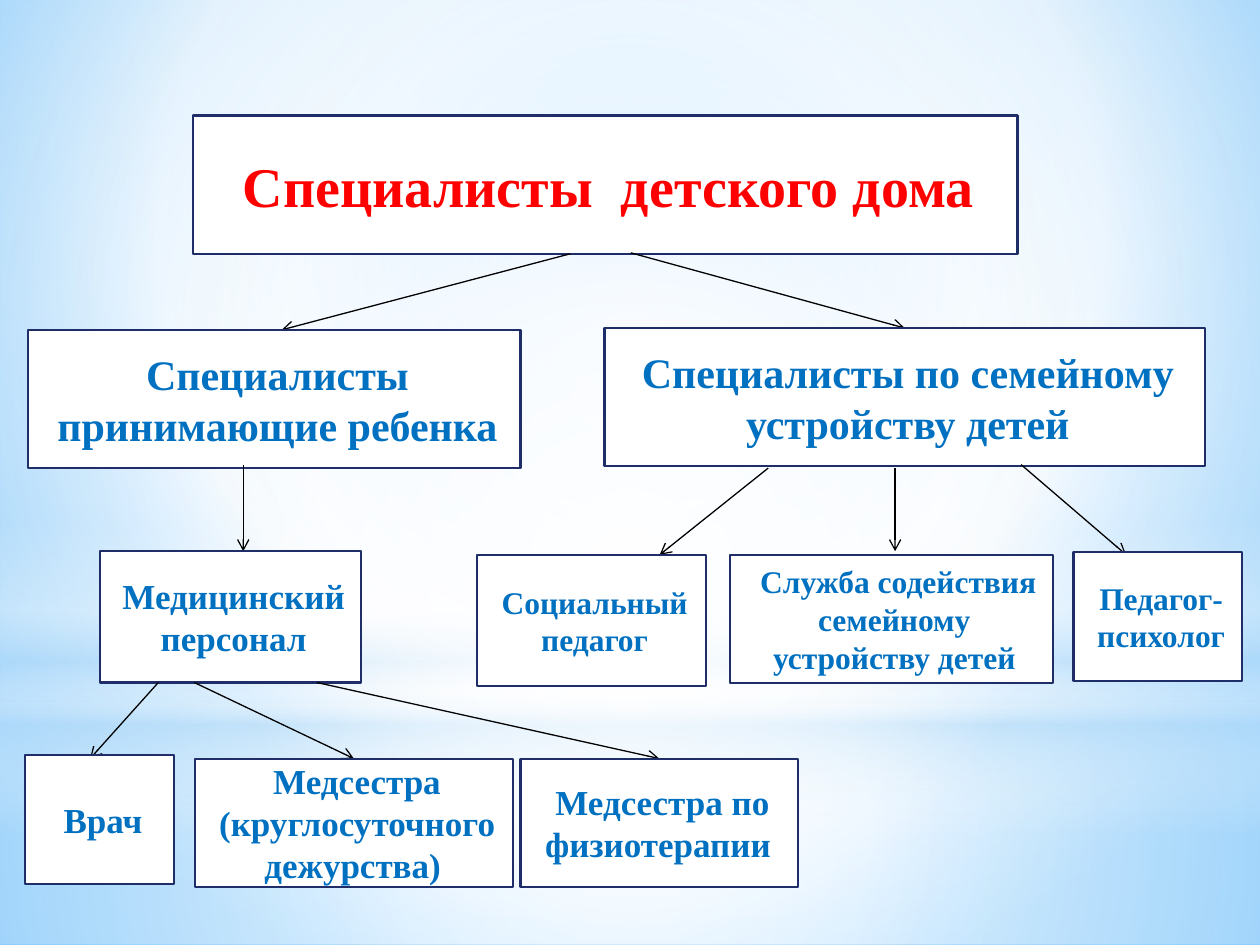
from pptx import Presentation
from pptx.dml.color import RGBColor as Rgb
from pptx.enum.shapes import MSO_CONNECTOR as Conn, MSO_SHAPE as Kind
from pptx.enum.text import MSO_ANCHOR as Anchor, MSO_AUTO_SIZE as Auto, PP_ALIGN as Align
from pptx.oxml import parse_xml
from pptx.oxml.ns import nsdecls, qn
from pptx.util import Pt

HUES = {
    "edge": "1F2E69", "text": "0070C0", "head": "FF0000", "line": "000000",
    "white": "FFFFFF", "pale": "B4DCFA", "sky": "9ED5FF", "deep": "5BB9FF",
}
FONT = "Times New Roman"
CENTER = (50, 50, 50, 50)


def hue(name):
    return Rgb.from_string(HUES[name])


def shade(part, stops, focus=None):
    marks = "".join(
        f'<a:gs pos="{pos * 1000}"><a:srgbClr val="{HUES[name]}">'
        f'<a:alpha val="{alpha * 1000}"/></a:srgbClr></a:gs>'
        for pos, name, alpha in stops
    )
    way = '<a:lin ang="5400000" scaled="0"/>'
    if focus:
        sides = " ".join(f'{side}="{val * 1000}"' for side, val in zip("ltrb", focus))
        way = f'<a:path path="circle"><a:fillToRect {sides}/></a:path>'
    fill = parse_xml(
        f'<a:gradFill {nsdecls("a")} rotWithShape="1"><a:gsLst>{marks}</a:gsLst>{way}</a:gradFill>'
    )
    old = next(part.iter(qn("a:solidFill")))
    old.getparent().replace(old, fill)


def glow(slide, box, stops, focus=None, kind=Kind.RECTANGLE):
    shape = slide.shapes.add_shape(kind, *map(Pt, box))
    shape.shadow.inherit = False
    shape.line.fill.background()
    shape.fill.solid()
    shade(shape._element.spPr, stops, focus)


def write(shape, text, size=20, color="text"):
    frame = shape.text_frame
    frame.word_wrap = True
    frame.auto_size = Auto.NONE
    frame.vertical_anchor = Anchor.MIDDLE
    par = frame.paragraphs[0]
    par.alignment = Align.CENTER
    props = par._p.get_or_add_pPr()
    props.set("marL", str(Pt(3.6)))
    props.set("indent", "0")
    run = par.add_run()
    run.text = text
    font = run.font
    font.name, font.size, font.bold = FONT, Pt(size), True
    font.color.rgb = hue(color)


def frame(shape):
    shape.fill.solid()
    shape.fill.fore_color.rgb = hue("white")
    shape.line.color.rgb = hue("edge")
    shape.line.width = Pt(1.25)


def card(slide, box, text, **style):
    shape = slide.shapes.add_shape(Kind.RECTANGLE, *map(Pt, box))
    shape.shadow.inherit = False
    frame(shape)
    write(shape, text, **style)
    return shape


def arrow(slide, x1, y1, x2, y2):
    line = slide.shapes.add_connector(Conn.STRAIGHT, Pt(x1), Pt(y1), Pt(x2), Pt(y2))
    line.line.color.rgb = hue("line")
    line.line.width = Pt(0.75)
    line.line._get_or_add_ln().append(parse_xml(f'<a:tailEnd {nsdecls("a")} type="arrow"/>'))
    line._element.spPr.append(parse_xml(f'<a:effectLst {nsdecls("a")}/>'))
    return line


def backdrop(slide, x, y, w, h):
    slide.background.fill.solid()
    shade(slide._element, [(0, "sky", 100), (60, "white", 100), (100, "deep", 100)],
          (20, 10, 20, 60))
    top = 402
    glow(slide, (x, y + top, w, h - top),
         [(0, "white", 91), (37, "white", 76), (100, "pale", 79)], CENTER)
    glow(slide, (x, y, w, top),
         [(0, "white", 89), (48, "white", 62), (100, "pale", 79)], CENTER)
    glow(slide, (x, y + 297, w, 180),
         [(0, "white", 0), (29, "white", 30), (45, "pale", 40),
          (55, "white", 26), (65, "pale", 60), (100, "white", 0)])
    glow(slide, (x, y + 126, w, top),
         [(0, "white", 100), (56, "white", 0)], CENTER, Kind.OVAL)


def heading(slide, x, y, w, h):
    title = slide.shapes.title
    slide.shapes._spTree.append(title._element)
    title.left, title.top, title.width, title.height = map(Pt, (x, y, w, h))
    frame(title)
    write(title, "Специалисты  детского дома", size=32, color="head")
    arrow(slide, x + 215.5, y + h, x + 50.5, y + 122.5)
    return arrow(slide, x + 250, y + h - 0.5, x + 407, y + 122)


def intake(slide, x, y, w, h):
    card(slide, (x, y, w, h), "Специалисты принимающие ребенка", size=24)
    arrow(slide, x + 123, y + 77, x + 123, y + 126.5)
    card(slide, (x + 41, y + 126.5, 149.5, 75), "Медицинский персонал")
    base = y + 201.5
    low = y + 245
    arrow(slide, x + 74.5, base, x + 35.5, low)
    staff = [
        (x + 95, x + 95.5, 181.5, "Медсестра (круглосуточного дежурства) "),
        (x + 165, x + 281.5, 158.5, "Медсестра по физиотерапии "),
    ]
    for start, left, wide, text in staff:
        line = arrow(slide, start, base, left + wide / 2, low)
        line.end_connect(card(slide, (left, low, wide, 73.5), text), 0)
    card(slide, (x - 1.5, low - 2, 85, 73.5), "Врач")


def family(slide, x, y, w, h):
    root = card(slide, (x, y, w, h), "Специалисты по семейному устройству детей", size=24)
    for x1, y1, x2, y2 in [(93.5, 80, 31.5, 129.5), (166, 80, 166, 127.5),
                           (238, 78, 298, 129.5)]:
        arrow(slide, x + x1, y + y1, x + x2, y + y2)
    for left, top, wide, high, text in [
        (-73, 129.5, 131, 75, "Социальный педагог"),
        (71.5, 129.5, 184.5, 73.5, " Служба содействия семейному устройству детей"),
        (268, 128, 96.5, 73.5, "Педагог- психолог"),
    ]:
        card(slide, (x + left, y + top, wide, high), text, size=18)
    return root


def main():
    deck = Presentation()
    deck.slide_width, deck.slide_height = Pt(720), Pt(540)
    slide = deck.slides.add_slide(deck.slide_layouts[5])
    backdrop(slide, 0, 0, 720, 540)
    link = heading(slide, 110.5, 66, 471, 79)
    intake(slide, 16, 188.5, 281.5, 79)
    link.end_connect(family(slide, 345.5, 187.5, 343, 79), 0)
    deck.save("out.pptx")


if __name__ == "__main__":
    main()
